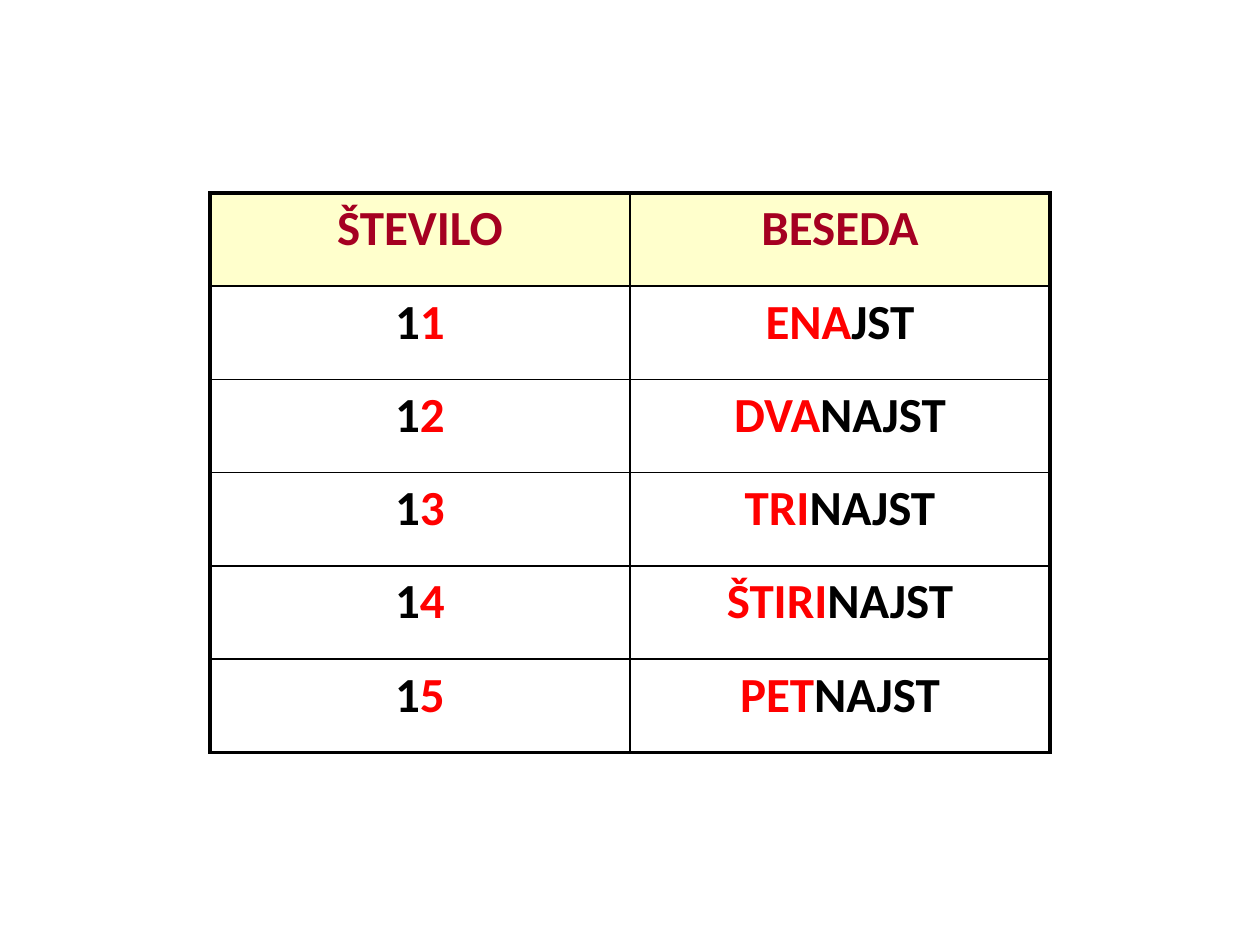
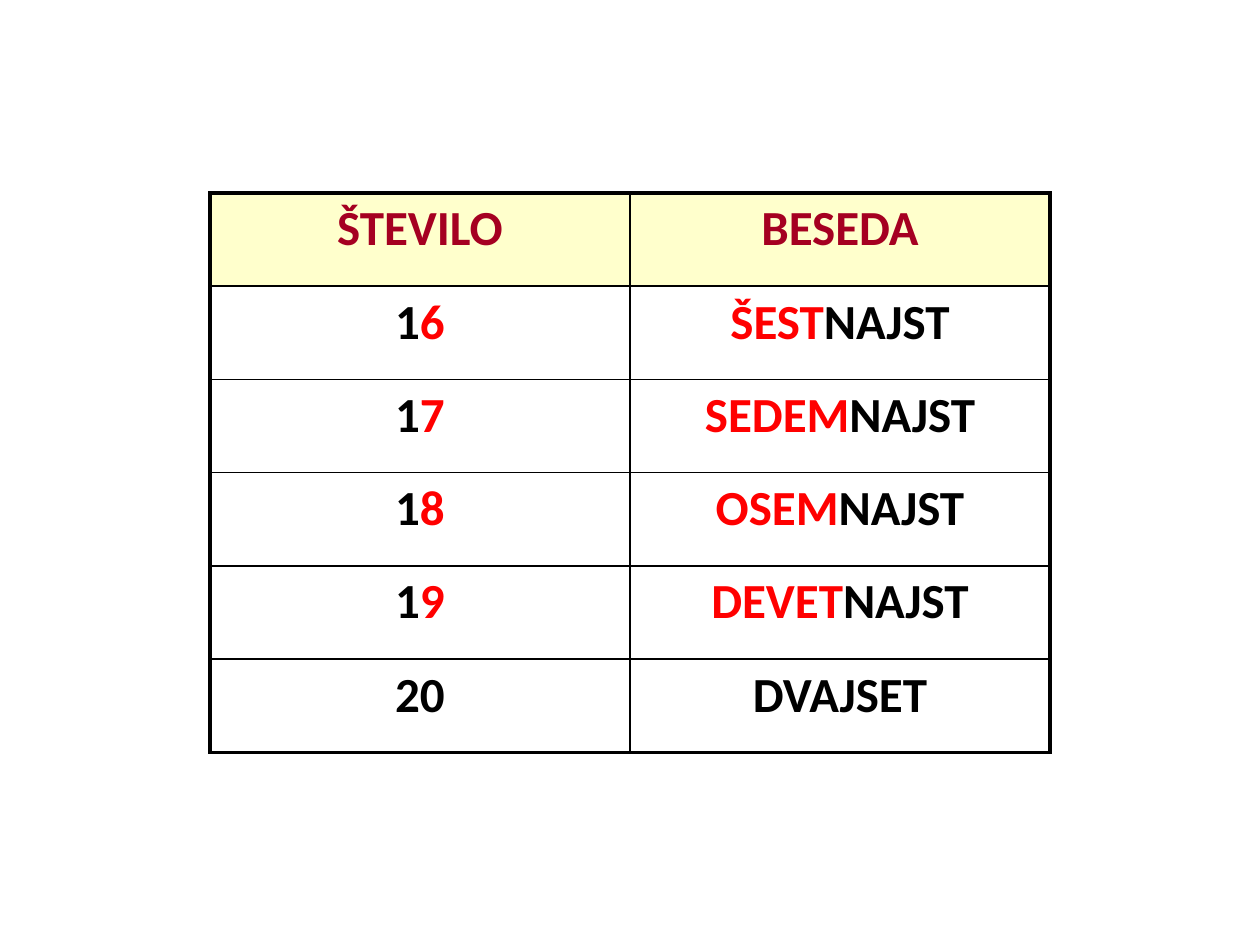
"""Two slides that tabulate the Slovene numbers from 11 to 20."""
from typing import NamedTuple

from lxml import etree
from pptx import Presentation
from pptx.dml.color import RGBColor
from pptx.enum.text import PP_ALIGN
from pptx.oxml.ns import qn
from pptx.util import Pt

CENTER = PP_ALIGN.CENTER
BLANK = 6
FONT = "Calibri"
COLORS = {"ink": "000000", "red": "FF0000", "wine": "A50021", "cream": "FFFFCC"}
LEFT, TOP, WIDTH, ROW_H = Pt(120), Pt(110.2), Pt(480), Pt(53.3)
THIN, THICK = Pt(1), Pt(2.25)


class Part(NamedTuple):
    text: str
    color: str = "ink"


class Entry(NamedTuple):
    ten: str
    unit: str
    stem: str
    end: str = "NAJST"

    def cells(self) -> list[list[Part]]:
        return [
            [Part(self.ten), Part(self.unit, "red")],
            [Part(self.stem, "red"), Part(self.end)],
        ]


HEAD = [[Part("ŠTEVILO", "wine")], [Part("BESEDA", "wine")]]
LAST = [[Part("20")], [Part("DVAJSET")]]
FIRST_SET = [
    Entry("1", "1", "ENA", "JST"),
    Entry("1", "2", "DVA"),
    Entry("1", "3", "TRI"),
    Entry("1", "4", "ŠTIRI"),
    Entry("1", "5", "PET"),
]
NEXT_SET = [
    Entry("1", "6", "ŠEST"),
    Entry("1", "7", "SEDEM"),
    Entry("1", "8", "OSEM"),
    Entry("1", "9", "DEVET"),
]


def add_text(para, text: str, *, color: str = "ink", size: float = 28, bold: bool = True) -> None:
    run = para.add_run()
    run.text = text
    run.font.name = FONT
    run.font.size = Pt(size)
    run.font.bold = bold
    run.font.color.rgb = RGBColor.from_string(COLORS[color])


def add_edge(cell, side: str, width: int) -> None:
    props = cell._tc.get_or_add_tcPr()
    line = etree.SubElement(props, qn(f"a:ln{side}"), w=str(width))
    fill = etree.SubElement(line, qn("a:solidFill"))
    etree.SubElement(fill, qn("a:srgbClr"), val=COLORS["ink"])


def add_grid(slide, rows: list[list[list[Part]]]) -> None:
    count, cols = len(rows), len(rows[0])
    grid = slide.shapes.add_table(count, cols, LEFT, TOP, WIDTH, ROW_H * count).table
    grid.first_row = grid.horz_banding = False
    for r, row in enumerate(rows):
        for c, parts in enumerate(row):
            cell = grid.cell(r, c)
            outer = {"L": c == 0, "R": c == cols - 1, "T": r == 0, "B": r == count - 1}
            for side, thick in outer.items():
                add_edge(cell, side, THICK if thick else THIN)
            if r == 0:
                cell.fill.solid()
                cell.fill.fore_color.rgb = RGBColor.from_string(COLORS["cream"])
            else:
                cell.fill.background()
            para = cell.text_frame.paragraphs[0]
            para.alignment = CENTER
            for part in parts:
                add_text(para, part.text, color=part.color)


def main() -> None:
    deck = Presentation()
    deck.slide_width, deck.slide_height = Pt(720), Pt(540)
    first = [entry.cells() for entry in FIRST_SET]
    second = [entry.cells() for entry in NEXT_SET] + [LAST]
    for body in (first, second):
        slide = deck.slides.add_slide(deck.slide_layouts[BLANK])
        add_grid(slide, [HEAD] + body)
    deck.save("out.pptx")


if __name__ == "__main__":
    main()
